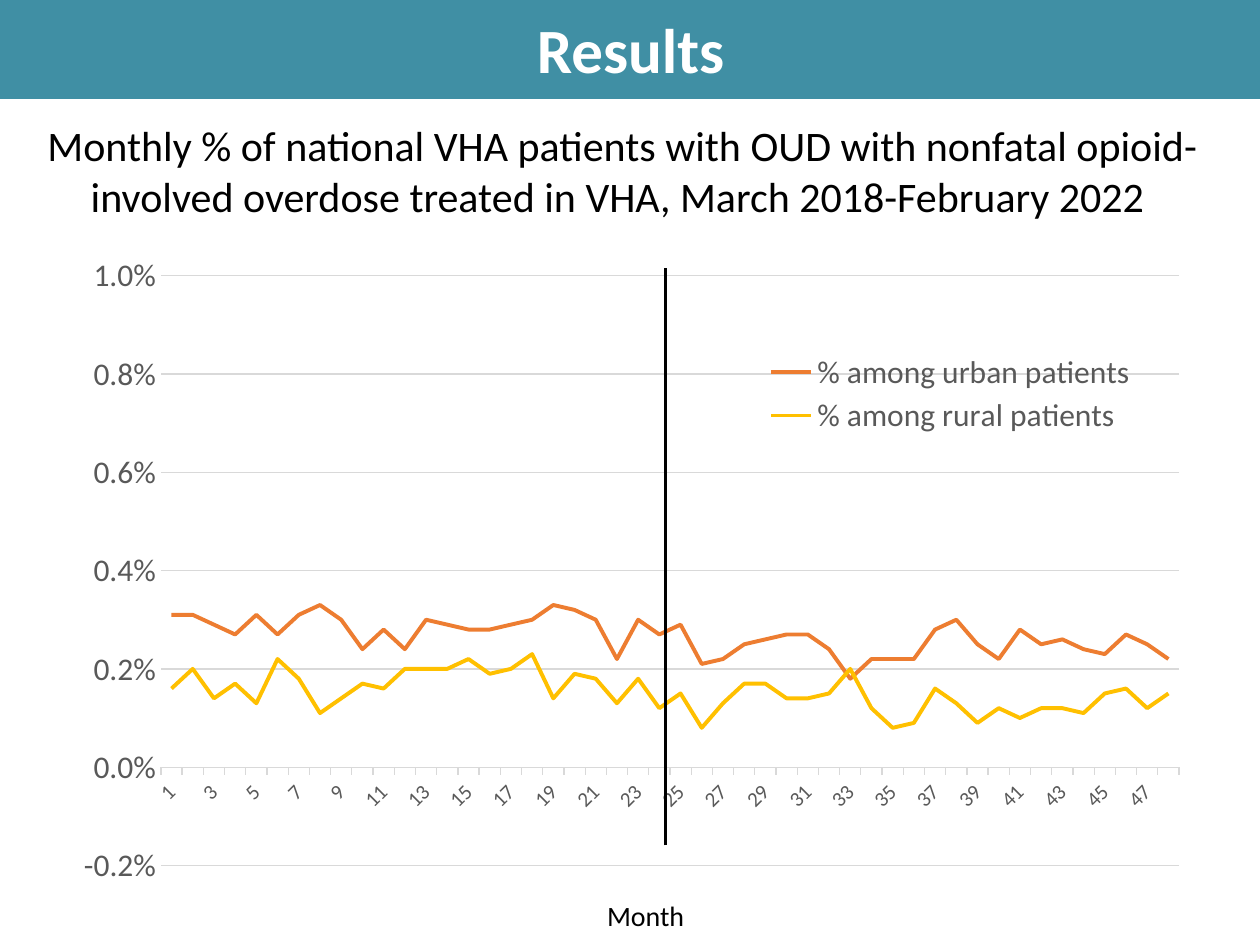
from lxml.etree import SubElement
from pptx import Presentation
from pptx.chart.data import CategoryChartData
from pptx.dml.color import RGBColor
from pptx.enum.chart import XL_CHART_TYPE, XL_LEGEND_POSITION, XL_TICK_MARK
from pptx.enum.shapes import MSO_CONNECTOR, MSO_SHAPE
from pptx.enum.text import MSO_ANCHOR, MSO_AUTO_SIZE, PP_ALIGN
from pptx.oxml import parse_xml
from pptx.oxml.ns import nsdecls, qn
from pptx.util import Inches, Pt

TEAL = RGBColor(0x40, 0x8F, 0xA4)
WHITE = RGBColor(0xFF, 0xFF, 0xFF)
BLACK = RGBColor(0, 0, 0)
GRAY = RGBColor(0x59, 0x59, 0x59)
PALE = RGBColor(0xD9, 0xD9, 0xD9)
ORANGE = RGBColor(0xED, 0x7D, 0x31)
GOLD = RGBColor(0xFF, 0xC0, 0x00)
FONT = "Calibri"

TITLE = "Results"
HEAD = ("Monthly % of national VHA patients with OUD with nonfatal opioid-"
        "involved overdose treated in VHA, March 2018-February 2022 ")
# Rates in hundredths of a percent, one per month
SERIES = [
    ("% among urban patients", ORANGE,
     [31, 31, 29, 27, 31, 27, 31, 33, 30, 24, 28, 24,
      30, 29, 28, 28, 29, 30, 33, 32, 30, 22, 30, 27,
      29, 21, 22, 25, 26, 27, 27, 24, 18, 22, 22, 22,
      28, 30, 25, 22, 28, 25, 26, 24, 23, 27, 25, 22]),
    ("% among rural patients", GOLD,
     [16, 20, 14, 17, 13, 22, 18, 11, 14, 17, 16, 20,
      20, 20, 22, 19, 20, 23, 14, 19, 18, 13, 18, 12,
      15, 8, 13, 17, 17, 14, 14, 15, 20, 12, 8, 9,
      16, 13, 9, 12, 10, 12, 12, 11, 15, 16, 12, 15]),
]


def write(shape, text, size, color=BLACK, bold=False, align=PP_ALIGN.CENTER):
    frame = shape.text_frame
    frame.word_wrap = True
    para = frame.paragraphs[0]
    para.alignment = align
    run = para.add_run()
    run.text = text
    style(run.font, size, color)
    run.font.bold = bold


def style(font, size, color):
    font.name, font.size = FONT, Pt(size)
    font.color.rgb = color


def add_text(slide, box, text, size, **look):
    shape = slide.shapes.add_textbox(*map(Inches, box))
    write(shape, text, size, **look)
    shape.text_frame.auto_size = MSO_AUTO_SIZE.SHAPE_TO_FIT_TEXT


def place(parent, spot, box, inner=False):
    """Put a manual layout, in fractions of the chart, at a child index."""
    for old in parent.findall(qn("c:layout")):
        parent.remove(old)
    parts = [("layoutTarget", "inner")] if inner else []
    parts += [("xMode", "edge"), ("yMode", "edge")] + list(zip("xywh", box))
    body = "".join(f'<c:{tag} val="{val}"/>' for tag, val in parts)
    parent.insert(spot, parse_xml(
        f'<c:layout {nsdecls("c")}><c:manualLayout>{body}'
        '</c:manualLayout></c:layout>'))


def add_rates(slide):
    data = CategoryChartData(number_format="0.0%")
    data.categories = [str(n + 1) for n in range(len(SERIES[0][2]))]
    for name, _, rates in SERIES:
        data.add_series(name, [rate / 10000 for rate in rates])
    box = map(Inches, (0.46, 1.93, 9.08, 5.2))
    chart = slide.shapes.add_chart(XL_CHART_TYPE.LINE, *box, data).chart
    chart.has_title = False
    style(chart.font, 10, BLACK)
    plot = chart.plots[0]
    plot.vary_by_categories = False
    for line, (_, color, _) in zip(plot.series, SERIES):
        line.smooth = False
        line.format.line.color.rgb = color
        line.format.line.width = Pt(2.25)

    months = chart.category_axis
    style(months.tick_labels.font, 12, GRAY)
    months.major_tick_mark = XL_TICK_MARK.OUTSIDE
    months.format.line.color.rgb = PALE
    months.format.line.width = Pt(0.75)
    axis = months._element
    axis.find(qn("c:txPr")).find(qn("a:bodyPr")).set("rot", "-2700000")
    axis.find(qn("c:noMultiLvlLbl")).addprevious(
        parse_xml(f'<c:tickLblSkip {nsdecls("c")} val="2"/>'))

    rates = chart.value_axis
    rates.minimum_scale, rates.maximum_scale = -0.002, 0.01
    rates.major_unit = 0.002
    rates.major_tick_mark = XL_TICK_MARK.NONE
    rates.format.line.fill.background()
    style(rates.tick_labels.font, 18, GRAY)
    rates.tick_labels.number_format = "0.0%"
    rates.tick_labels.number_format_is_linked = False
    grid = rates.major_gridlines.format.line
    grid.color.rgb, grid.width = PALE, Pt(0.75)

    chart.has_legend = True
    legend = chart.legend
    legend.position = XL_LEGEND_POSITION.CORNER
    legend.include_in_layout = False
    style(legend.font, 18, GRAY)
    place(legend._element, 1, (0.6, 0.16, 0.36, 0.14))
    place(chart._chartSpace.chart.plotArea, 0, (0.09, 0.05, 0.89, 0.9), True)


def main():
    deck = Presentation()
    deck.slide_width, deck.slide_height = Inches(10), Inches(7.5)
    slide = deck.slides.add_slide(deck.slide_layouts[6])
    add_rates(slide)

    band = slide.shapes.add_shape(
        MSO_SHAPE.RECTANGLE, 0, 0, Inches(10.01), Inches(0.77))
    band.shadow.inherit = False
    band.fill.solid()
    band.fill.fore_color.rgb = band.line.color.rgb = TEAL
    band.line.width = Pt(2)
    band.text_frame.vertical_anchor = MSO_ANCHOR.MIDDLE
    write(band, TITLE, 36, color=WHITE, bold=True)

    split = slide.shapes.add_connector(
        MSO_CONNECTOR.STRAIGHT, *map(Inches, (5.28, 6.71, 5.28, 2.13)))
    split.line.color.rgb, split.line.width = BLACK, Pt(1.5)
    SubElement(split._element.spPr, qn("a:effectLst"))

    add_text(slide, (0.22, 0.9, 9.44, 0.91), HEAD, 24)
    add_text(slide, (4.72, 7.08, 0.98, 0.37), "Month", 16,
             align=PP_ALIGN.LEFT)
    deck.save("out.pptx")


if __name__ == "__main__":
    main()
